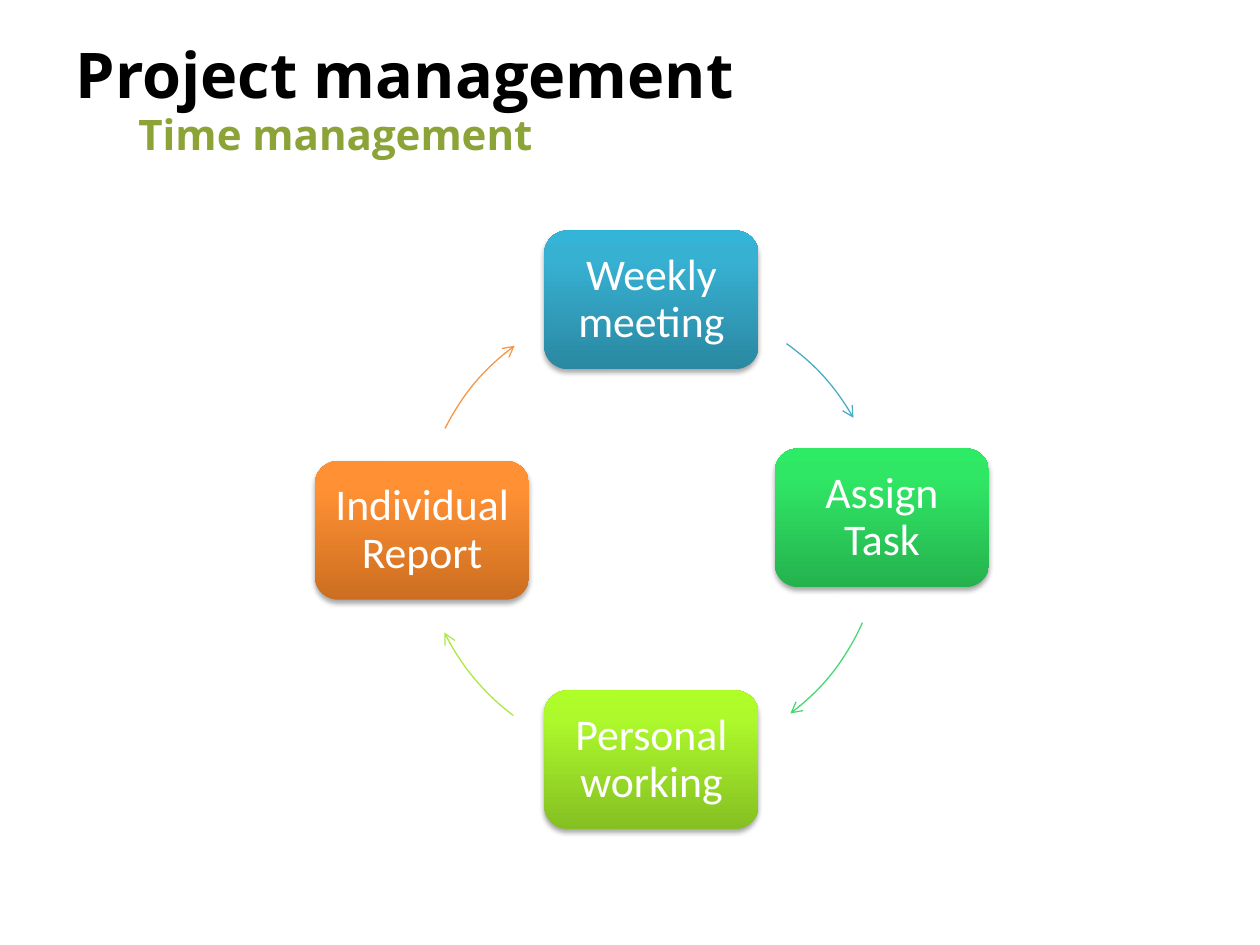
from copy import deepcopy

from lxml import etree
from pptx import Presentation
from pptx import util as u
from pptx.dml.color import RGBColor
from pptx.enum import shapes, text
from pptx.oxml import parse_xml
from pptx.oxml.ns import nsdecls, qn

INK = {"title": "000000", "sub": "8CA338", "label": "FFFFFF"}

# Step label, left, top, gradient from bottom to top
STEPS = [
    ("Weekly meeting", 4.32, 1.83, ("2A88A2", "37B1D2", "34B4D6")),
    ("Assign Task", 6.15, 3.56, ("25B24E", "30E765", "2DEB64")),
    ("Personal working", 4.32, 5.48, ("85C022", "ADF92C", "AFFE28")),
    ("Individual Report", 2.5, 3.66, ("CC6E20", "FF9034", "FF9136")),
]
# Circle left, top, start and end angle, colour
ARCS = [
    (3.36, 2.39, 305.4, 330.5, "4BACC6"),
    (3.35, 2.38, 23.8, 53, "47D872"),
    (3.34, 2.39, 126.7, 153.8, "ACE946"),
    (3.34, 2.39, 206.5, 233.7, "F79646"),
]
BOX = (1.7, 1.1)
RING = 3.65
STOPS = (0, 0.8, 1)

SHADOW = (
    f'<a:effectLst {nsdecls("a")}><a:outerShdw blurRad="39370" dist="22860" '
    'dir="5400000" rotWithShape="0"><a:srgbClr val="000000">'
    '<a:alpha val="35000"/></a:srgbClr></a:outerShdw></a:effectLst>'
)


def place(shape, *box):
    for name, size in zip(("left", "top", "width", "height"), box):
        setattr(shape, name, u.Inches(size))


def write(shape, words, font, color, align, inset=0.1, tall=0.05, space=1.0):
    frame = shape.text_frame
    form = {
        "word_wrap": True,
        "auto_size": text.MSO_AUTO_SIZE.NONE,
        "vertical_anchor": text.MSO_ANCHOR.MIDDLE,
        "margin_left": u.Inches(inset),
        "margin_right": u.Inches(inset),
        "margin_top": u.Inches(tall),
        "margin_bottom": u.Inches(tall),
    }
    for name, value in form.items():
        setattr(frame, name, value)
    para = frame.paragraphs[0]
    para.alignment = align
    para.line_spacing = space
    run = para.add_run()
    run.text = words
    for name, value in font.items():
        setattr(run.font, name, value)
    run.font.color.rgb = RGBColor.from_string(color)


def shade(shape, colors):
    fill = shape.fill
    fill.gradient()
    fill.gradient_angle = 90
    stops = shape._element.spPr.find(".//" + qn("a:gsLst"))
    stops.append(deepcopy(stops[-1]))
    for stop, spot, color in zip(fill.gradient_stops, STOPS, colors):
        stop.position = spot
        stop.color.rgb = RGBColor.from_string(color)


def add_step(slide, words, left, top, colors):
    box = slide.shapes.add_shape(
        shapes.MSO_SHAPE.ROUNDED_RECTANGLE,
        *(u.Inches(n) for n in (left, top, *BOX)),
    )
    shade(box, colors)
    box.line.fill.background()
    box._element.spPr.append(parse_xml(SHADOW))
    font = {"name": "Calibri", "size": u.Pt(25)}
    write(box, words, font, INK["label"], text.PP_ALIGN.CENTER,
          inset=0.08, tall=0.1, space=0.9)


def add_arc(slide, left, top, start, end, color):
    arc = slide.shapes.add_shape(
        shapes.MSO_SHAPE.ARC,
        *(u.Inches(n) for n in (left, top, RING, RING)),
    )
    # One degree is 60000 units, and adjustments count in 100000
    for i, angle in enumerate((start, end)):
        arc.adjustments[i] = angle * 0.6
    arc.shadow.inherit = False
    arc.fill.background()
    arc.line.width = u.Pt(0.75)
    arc.line.color.rgb = RGBColor.from_string(color)
    etree.SubElement(arc.line._get_or_add_ln(), qn("a:tailEnd"), type="arrow")


def main():
    deck = Presentation()
    deck.slide_width, deck.slide_height = u.Inches(10), u.Inches(7.5)
    slide = deck.slides.add_slide(deck.slide_layouts[5])

    # Headings
    head = {"name": "Open Sans", "bold": True}
    title = slide.shapes.title
    place(title, 0.5, 0.17, 9, 0.83)
    write(title, "Project management", {**head, "size": u.Pt(36)},
          INK["title"], text.PP_ALIGN.LEFT)
    sub = slide.shapes.add_textbox(0, 0, 0, 0)
    place(sub, 0.5, 0.8, 9, 0.53)
    write(sub, "\tTime management", {**head, "size": u.Pt(24)},
          INK["sub"], text.PP_ALIGN.LEFT)

    # Cycle of steps and arrows
    for step, arc in zip(STEPS, ARCS):
        add_step(slide, *step)
        add_arc(slide, *arc)

    deck.save("out.pptx")


if __name__ == "__main__":
    main()
